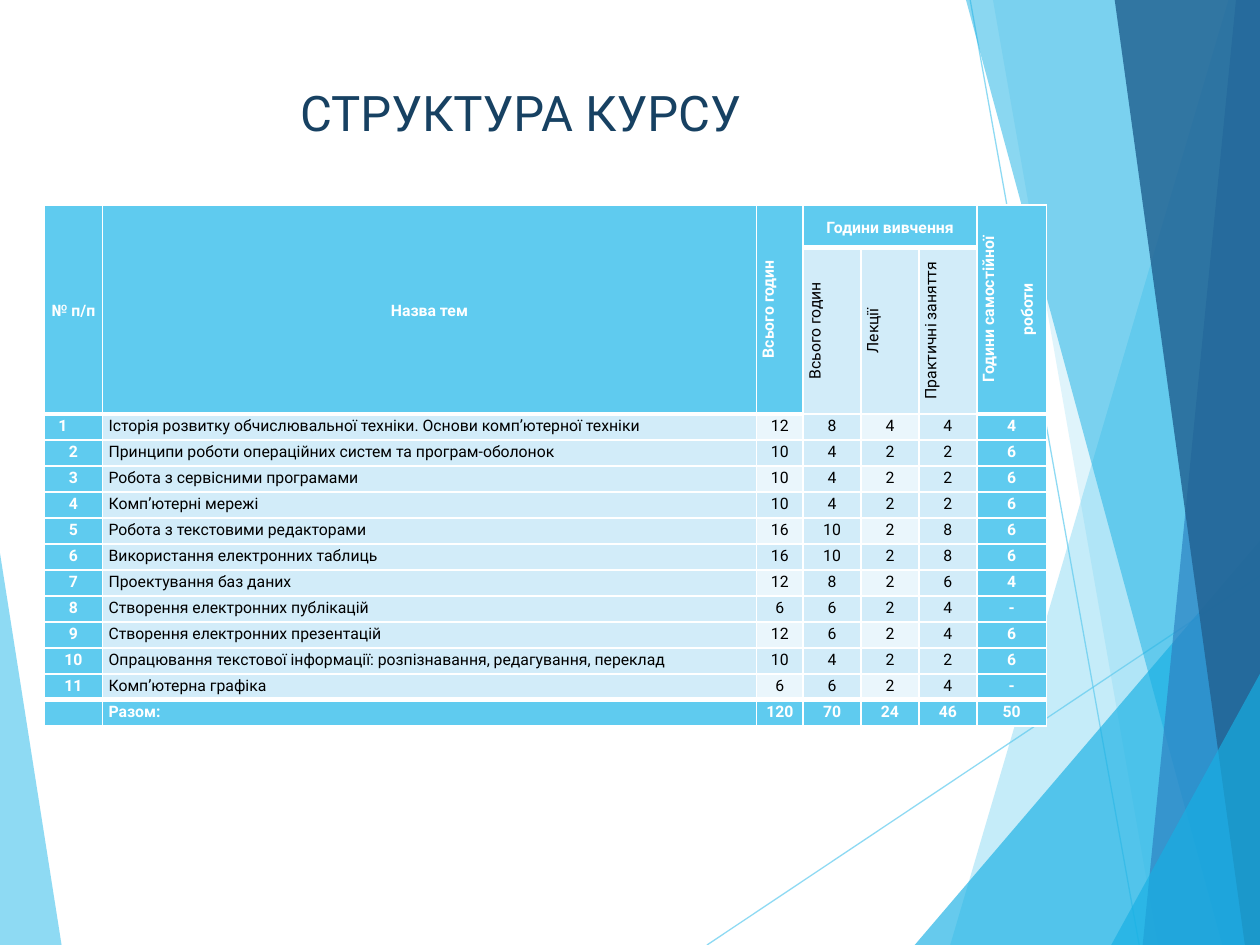
import dataclasses

import pptx
import pptx.dml.color
import pptx.enum.shapes
import pptx.enum.text
import pptx.oxml
import pptx.oxml.ns
import pptx.util
from lxml import etree

Pt = pptx.util.Pt
qn = pptx.oxml.ns.qn
Align = pptx.enum.text.PP_ALIGN
Anchor = pptx.enum.text.MSO_ANCHOR


@dataclasses.dataclass(frozen=True)
class Theme:
    font: str = "Roboto"
    title_size: float = 28
    table_size: float = 9
    title: str = "174162"
    accent: str = "5FCBEF"
    bright: str = "17B0E4"
    blue: str = "2E83C3"
    navy: str = "226292"
    tint: str = "D2ECF9"
    pale: str = "EAF6FC"
    text: str = "000000"
    white: str = "FFFFFF"


@dataclasses.dataclass(frozen=True)
class Box:
    left: float
    top: float
    width: float
    height: float

    def in_points(self):
        return [Pt(length) for length in dataclasses.astuple(self)]


THEME = Theme()
SLIDE = Box(0, 0, 720, 540)
TITLE = Box(117.4, 43.2, 360, 41)
TABLE = Box(25.4, 117, 572.8, 298)

# Top x and y of the slanted edge, its bottom x, colour, opacity in percent
LEFT_FACETS = [(0, 316, 35.2, THEME.accent, 70)]
RIGHT_FACETS = [
    (702, 0, 543, THEME.accent, 36),
    (567.4, 0, 661.7, THEME.accent, 20),
    (720, 309, 522.7, THEME.bright, 66),
    (552, 0, 698.4, THEME.bright, 50),
    (706.3, 0, 653, THEME.blue, 70),
    (637, 0, 711.4, THEME.navy, 82),
    (720, 385, 635, THEME.bright, 66),
]
RAYS = [(404, 540, 720, 329), (554.4, 0, 651, 540)]

COLUMN_WIDTHS = [33.1, 373.8, 26.7, 33.1, 33.1, 33.1, 39.9]
ROW_HEIGHTS = [24.5, 95] + [14.87] * 12
HEADINGS = {0: "№ п/п", 1: "Назва тем", 2: "Всього годин",
            3: "Години вивчення", 6: "Години самостійної\nроботи"}
STUDY_HEADINGS = {3: "Всього годин", 4: "Лекції", 5: "Практичні заняття"}
TOPICS = [
    ("Історія розвитку обчислювальної техніки. Основи комп’ютерної техніки", 12, 8, 4, 4, 4),
    ("Принципи роботи операційних систем та програм-оболонок", 10, 4, 2, 2, 6),
    ("Робота з сервісними програмами", 10, 4, 2, 2, 6),
    ("Комп’ютерні мережі", 10, 4, 2, 2, 6),
    ("Робота з текстовими редакторами", 16, 10, 2, 8, 6),
    ("Використання електронних таблиць", 16, 10, 2, 8, 6),
    ("Проектування баз даних", 12, 8, 2, 6, 4),
    ("Створення електронних публікацій", 6, 6, 2, 4, "-"),
    ("Створення електронних презентацій", 12, 6, 2, 4, 6),
    ("Опрацювання текстової інформації: розпізнавання, редагування, переклад", 10, 4, 2, 2, 6),
    ("Комп’ютерна графіка", 6, 6, 2, 4, "-"),
]
TOTALS = ("", "Разом:", 120, 70, 24, 46, 50)
FIRST_TOPIC_ROW = 2
TOTAL_ROW = FIRST_TOPIC_ROW + len(TOPICS)


def rgb(colour):
    return pptx.dml.color.RGBColor.from_string(colour)


def apply(target, values):
    for name, value in values.items():
        setattr(target, name, value)


def set_opacity(shape, percent):
    for colour in shape.element.iter(qn("a:srgbClr")):
        etree.SubElement(colour, qn("a:alpha"), val=str(percent * 1000))


def add_facets(slide, box, facets, side):
    """Fill the area between each slanted edge and the vertical at side."""
    for x_top, y_top, x_bottom, colour, opacity in facets:
        corners = [(x_top, y_top), (x_bottom, box.height), (side, box.height), (side, y_top)]
        start, *others = [(Pt(box.left + x), Pt(box.top + y)) for x, y in corners]
        outline = slide.shapes.build_freeform(*start, scale=1.0)
        outline.add_line_segments(others, close=True)
        facet = outline.convert_to_shape()
        facet.shadow.inherit = False
        facet.fill.solid()
        facet.fill.fore_color.rgb = rgb(colour)
        facet.line.fill.background()
        set_opacity(facet, opacity)


def add_rays(slide, box):
    for x1, y1, x2, y2 in RAYS:
        ray = slide.shapes.add_connector(
            pptx.enum.shapes.MSO_CONNECTOR.STRAIGHT,
            Pt(box.left + x1), Pt(box.top + y1), Pt(box.left + x2), Pt(box.top + y2))
        ray.line.color.rgb = rgb(THEME.accent)
        ray.line.width = Pt(0.75)
        set_opacity(ray, 70)
        etree.SubElement(ray.element.spPr, qn("a:effectLst"))


def add_title(slide, box):
    title = slide.shapes.title
    apply(title, dict(zip(("left", "top", "width", "height"), box.in_points())))
    title.text_frame.text = "СТРУКТУРА КУРСУ"
    apply(title.text_frame, {"word_wrap": True, "vertical_anchor": Anchor.MIDDLE})
    heading = title.text_frame.paragraphs[0]
    heading.alignment = Align.CENTER
    apply(heading.runs[0].font, {"name": THEME.font, "size": Pt(THEME.title_size)})
    heading.runs[0].font.color.rgb = rgb(THEME.title)


def heavy_below(row, column):
    return row in (0, TOTAL_ROW - 1) or (row == 1 and column not in STUDY_HEADINGS)


def draw_borders(cell, row, column):
    properties = cell._tc.get_or_add_tcPr()
    widths = {"lnL": 1, "lnR": 1,
              "lnT": 3 if heavy_below(row - 1, column) else 1,
              "lnB": 3 if heavy_below(row, column) else 1}
    for edge, width in widths.items():
        line = etree.SubElement(properties, qn(f"a:{edge}"), w=str(Pt(width)))
        fill = etree.SubElement(line, qn("a:solidFill"))
        etree.SubElement(fill, qn("a:srgbClr"), val=THEME.white)


def cell_colour(row, column):
    if row in (0, TOTAL_ROW) or column in (0, 6) or (row == 1 and column < 3):
        return THEME.accent
    striped = row >= FIRST_TOPIC_ROW and row % 2 == 0 and column in (2, 4)
    return THEME.pale if striped else THEME.tint


def format_cell(cell, row, column, content):
    draw_borders(cell, row, column)
    colour = cell_colour(row, column)
    accented = colour == THEME.accent
    cell.fill.solid()
    cell.fill.fore_color.rgb = rgb(colour)
    in_header = row < FIRST_TOPIC_ROW
    upright = in_header and (row == 1 or column in (2, 6))
    if upright:
        cell._tc.get_or_add_tcPr().set("vert", "vert270")
    first_number = (row, column) == (FIRST_TOPIC_ROW, 0)
    centred_vertically = in_header and (row, column) != (0, 2)
    apply(cell, {"margin_left": Pt(8 if first_number else 3.6), "margin_right": Pt(3.6),
                 "margin_top": 0, "margin_bottom": 0,
                 "vertical_anchor": Anchor.MIDDLE if centred_vertically else Anchor.TOP})
    cell.text_frame.text = str(content)
    left_aligned = first_number or (column == 1 and not in_header)
    for paragraph in cell.text_frame.paragraphs:
        apply(paragraph, {"alignment": Align.LEFT if left_aligned else Align.CENTER,
                          "line_spacing": 1.15, "space_after": Pt(10)})
        for run in paragraph.runs:
            apply(run.font, {"name": THEME.font, "size": Pt(THEME.table_size), "bold": accented})
            run.font.color.rgb = rgb(THEME.white if accented else THEME.text)
        if not paragraph.runs:
            etree.SubElement(paragraph._p, qn("a:endParaRPr"), sz=str(THEME.table_size * 100))


def add_course_table(slide, box):
    table = slide.shapes.add_table(len(ROW_HEIGHTS), len(COLUMN_WIDTHS), *box.in_points()).table
    apply(table, {"first_row": False, "horz_banding": False})
    for column, width in zip(table.columns, COLUMN_WIDTHS):
        column.width = Pt(width)
    for row, height in zip(table.rows, ROW_HEIGHTS):
        row.height = Pt(height)
    for column in HEADINGS.keys() - STUDY_HEADINGS.keys():
        table.cell(0, column).merge(table.cell(1, column))
    table.cell(0, min(STUDY_HEADINGS)).merge(table.cell(0, max(STUDY_HEADINGS)))
    headers = [[texts.get(column, "") for column in range(len(COLUMN_WIDTHS))]
               for texts in (HEADINGS, STUDY_HEADINGS)]
    topics = [(number, *topic) for number, topic in enumerate(TOPICS, 1)]
    for row, contents in enumerate([*headers, *topics, TOTALS]):
        for column, content in enumerate(contents):
            format_cell(table.cell(row, column), row, column, content)


def main():
    deck = pptx.Presentation()
    deck.slide_width, deck.slide_height = Pt(SLIDE.width), Pt(SLIDE.height)
    slide = deck.slides.add_slide(deck.slide_layouts.get_by_name("Title Only"))
    add_facets(slide, SLIDE, LEFT_FACETS, side=0)
    add_rays(slide, SLIDE)
    add_facets(slide, SLIDE, RIGHT_FACETS, side=SLIDE.width)
    add_title(slide, TITLE)
    add_course_table(slide, TABLE)
    deck.save("out.pptx")


if __name__ == "__main__":
    main()
